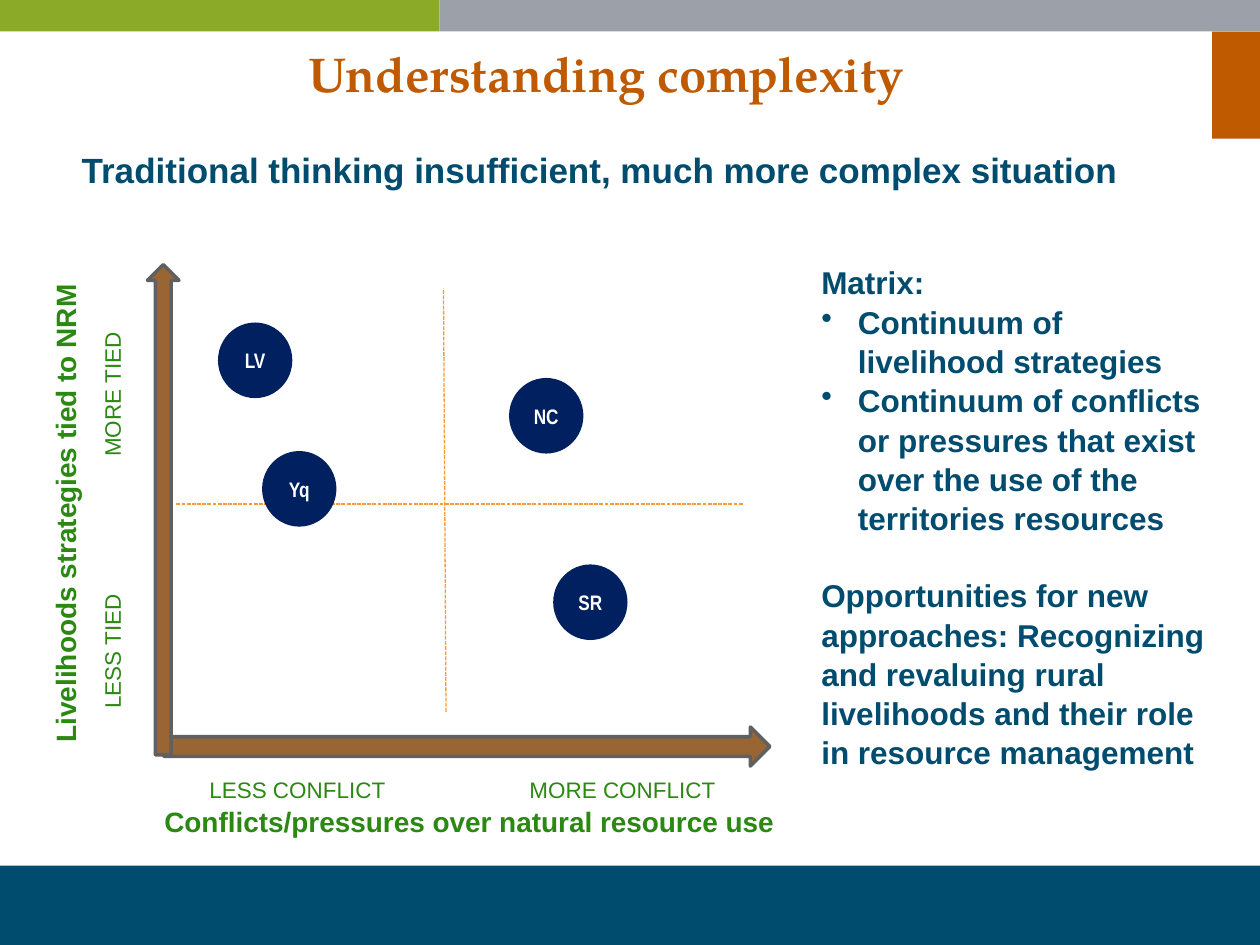
from typing import NamedTuple, Optional

from lxml import etree
from pptx import Presentation
from pptx import util as u
from pptx.dml.color import RGBColor
from pptx.enum import dml, shapes, text
from pptx.oxml.ns import qn

COLORS = {
    "white": "FFFFFF", "teal": "004C6F", "lime": "8BAA27", "gray": "9CA1A9",
    "rust": "BF5A00", "brown": "996633", "outline": "606060",
    "green": "2B8812", "navy": "002060", "orange": "FF9933",
}
SHAPE = shapes.MSO_SHAPE
CIRCLE_SIZE = (0.59, 0.6)


class Area(NamedTuple):
    left: float
    top: float
    width: float
    height: float


class Block(NamedTuple):
    area: Area
    color: str
    kind: SHAPE = SHAPE.RECTANGLE
    outline: Optional[str] = None


class Style(NamedTuple):
    size: float
    color: str
    font: str = "Arial"
    bold: bool = True
    small_caps: bool = False


class Label(NamedTuple):
    words: str
    area: Area
    style: Style
    upward: bool = False


class Divider(NamedTuple):
    start: tuple[float, float]
    end: tuple[float, float]


class Community(NamedTuple):
    code: str
    left: float
    top: float


class Item(NamedTuple):
    words: str
    bullet: bool = False
    gap: float = 0


TITLE = Style(28, "rust", "TeX Gyre Pagella")
SUBTITLE = Style(20, "teal")
BODY = Style(18, "teal")
AXIS = Style(16, "green")
SCALE = Style(16, "green", bold=False, small_caps=True)
CODE = Style(12, "white", "Arial Narrow")

FRAME = [
    Block(Area(0, 6.87, 10, 0.63), "teal"),
    Block(Area(0, 0, 3.49, 0.25), "lime"),
    Block(Area(3.49, 0, 6.51, 0.25), "gray"),
    Block(Area(9.62, 0.25, 0.38, 0.85), "rust"),
]
AXES = [
    Block(Area(1.3, 5.77, 4.81, 0.31), "brown", SHAPE.RIGHT_ARROW, "outline"),
    Block(Area(1.17, 2.1, 0.25, 3.89), "brown", SHAPE.UP_ARROW, "outline"),
]
LABELS = [
    Label("Livelihoods strategies tied to NRM", Area(0.38, 1.98, 0.27, 4.19), AXIS, True),
    Label("more tied", Area(0.67, 2.26, 0.4, 1.74), SCALE, True),
    Label("less tied", Area(0.67, 4.3, 0.4, 1.74), SCALE, True),
    Label("Conflicts/pressures over natural resource use", Area(0.95, 6.33, 5.55, 0.38), AXIS),
    Label("less conflict", Area(1.36, 6.12, 2, 0.25), SCALE),
    Label("more conflict", Area(3.94, 6.12, 2, 0.25), SCALE),
]
DIVIDERS = [Divider((1.4, 4), (5.9, 4)), Divider((3.54, 5.65), (3.52, 2.29))]
COMMUNITIES = [
    Community("NC", 4.04, 3),
    Community("Yq", 2.08, 3.58),
    Community("LV", 1.73, 2.56),
    Community("SR", 4.39, 4.48),
]
MATRIX_NOTES = [
    Item("Matrix:"),
    Item("Continuum of livelihood strategies", bullet=True),
    Item("Continuum of conflicts or pressures that exist over the use of the "
         "territories resources", bullet=True),
    Item("Opportunities for new approaches: Recognizing and revaluing rural "
         "livelihoods and their role in resource management", gap=21.6),
]


def rgb(name: str) -> RGBColor:
    return RGBColor.from_string(COLORS[name])


def inches(values) -> list[u.Length]:
    return [u.Inches(value) for value in values]


def add_block(page, block: Block):
    shape = page.shapes.add_shape(block.kind, *inches(block.area))
    shape.shadow.inherit = False
    shape.fill.solid()
    shape.fill.fore_color.rgb = rgb(block.color)
    if block.outline:
        shape.line.color.rgb = rgb(block.outline)
        shape.line.width = u.Pt(2)
    else:
        shape.line.fill.background()
    return shape


def add_span(para, words: str, style: Style) -> None:
    span = para.add_run()
    span.text = words
    font = span.font
    font.name, font.size, font.bold = style.font, u.Pt(style.size), style.bold
    font.color.rgb = rgb(style.color)
    if style.small_caps:
        span._r.get_or_add_rPr().set("cap", "small")


def add_centred_text(shape, words: str, style: Style) -> None:
    frame = shape.text_frame
    frame.margin_left = frame.margin_right = frame.margin_top = frame.margin_bottom = 0
    frame.vertical_anchor = text.MSO_ANCHOR.MIDDLE
    para = frame.paragraphs[0]
    para.alignment = text.PP_ALIGN.CENTER
    add_span(para, words, style)


def add_label(page, label: Label) -> None:
    shape = add_block(page, Block(label.area, "white"))
    add_centred_text(shape, label.words, label.style)
    if label.upward:
        shape.text_frame._txBody.bodyPr.set("vert", "vert270")


def add_community(page, community: Community) -> None:
    area = Area(community.left, community.top, *CIRCLE_SIZE)
    circle = add_block(page, Block(area, "navy", SHAPE.OVAL))
    add_centred_text(circle, community.code, CODE)


def add_divider(page, divider: Divider) -> None:
    line = page.shapes.add_connector(
        shapes.MSO_CONNECTOR.STRAIGHT, *inches(divider.start + divider.end))
    line.line.color.rgb = rgb("orange")
    line.line.width = u.Pt(0.75)
    line.line.dash_style = dml.MSO_LINE.SQUARE_DOT
    etree.SubElement(line._element.spPr, qn("a:effectLst"))


def add_bullet(para) -> None:
    properties = para._p.get_or_add_pPr()
    properties.set("marL", str(u.Inches(0.29)))
    properties.set("indent", str(u.Inches(-0.29)))
    etree.SubElement(properties, qn("a:buChar")).set("char", "•")


def add_text(page, area: Area, items: list[Item], style: Style,
             align=text.PP_ALIGN.LEFT, spacing: float = 1) -> None:
    box = page.shapes.add_textbox(*inches(area))
    frame = box.text_frame
    frame.word_wrap = True
    for index, item in enumerate(items):
        para = frame.add_paragraph() if index else frame.paragraphs[0]
        para.alignment = align
        para.line_spacing = spacing
        para.space_before = u.Pt(item.gap)
        if item.bullet:
            add_bullet(para)
        add_span(para, item.words, style)


def main() -> None:
    deck = Presentation()
    deck.slide_width, deck.slide_height = inches((10, 7.5))
    page = deck.slides.add_slide(deck.slide_layouts[6])
    for block in FRAME + AXES:
        add_block(page, block)
    for label in LABELS:
        add_label(page, label)
    for divider in DIVIDERS:
        add_divider(page, divider)
    for community in COMMUNITIES:
        add_community(page, community)
    add_text(page, Area(0, 0.3, 9.62, 0.57), [Item("Understanding complexity")],
             TITLE, text.PP_ALIGN.CENTER)
    add_text(page, Area(0.55, 1.13, 8.96, 1.13),
             [Item("Traditional thinking insufficient, much more complex situation")], SUBTITLE)
    add_text(page, Area(6.42, 2.03, 3.33, 4.04), MATRIX_NOTES, BODY, spacing=1.04)
    deck.save("out.pptx")


if __name__ == "__main__":
    main()
